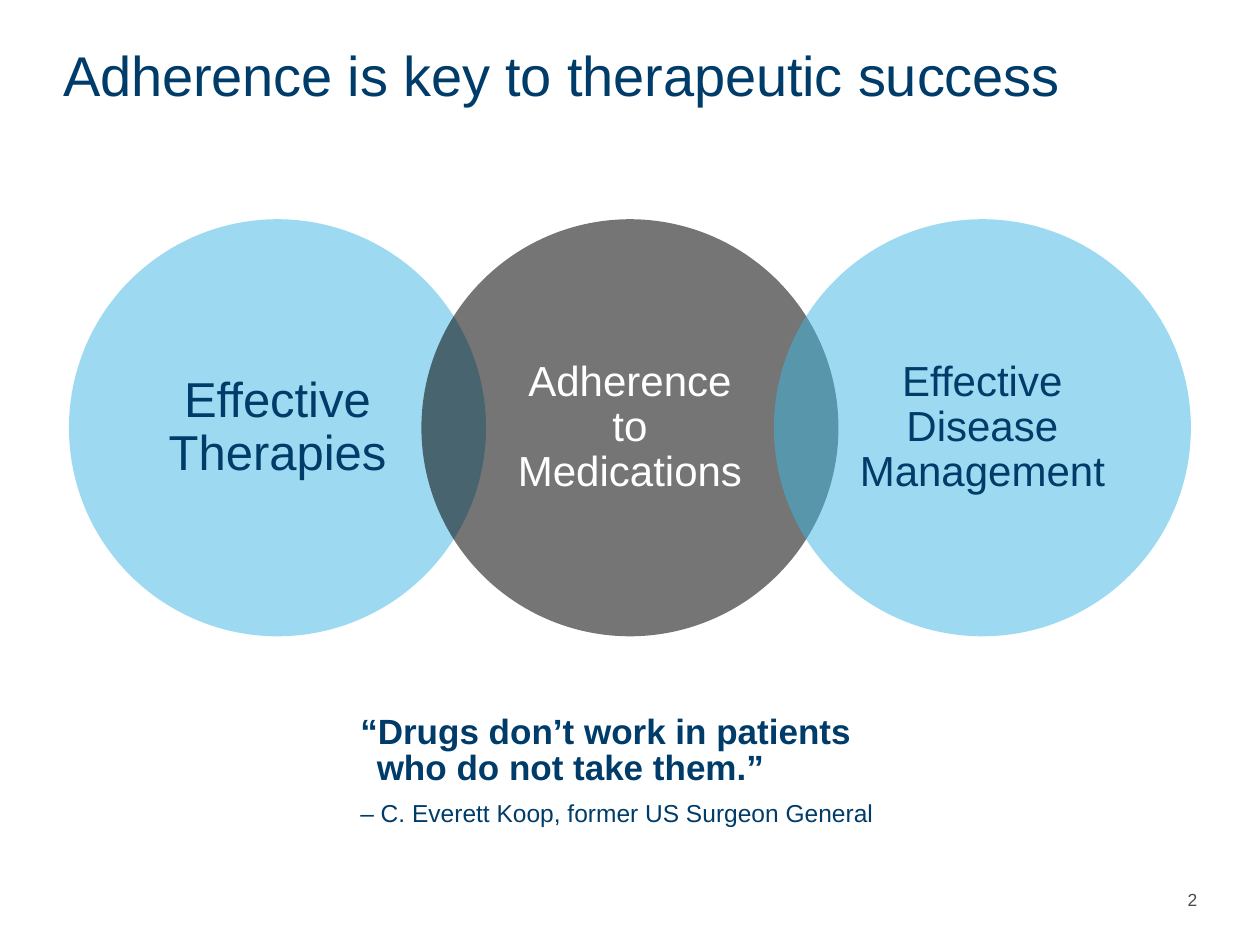
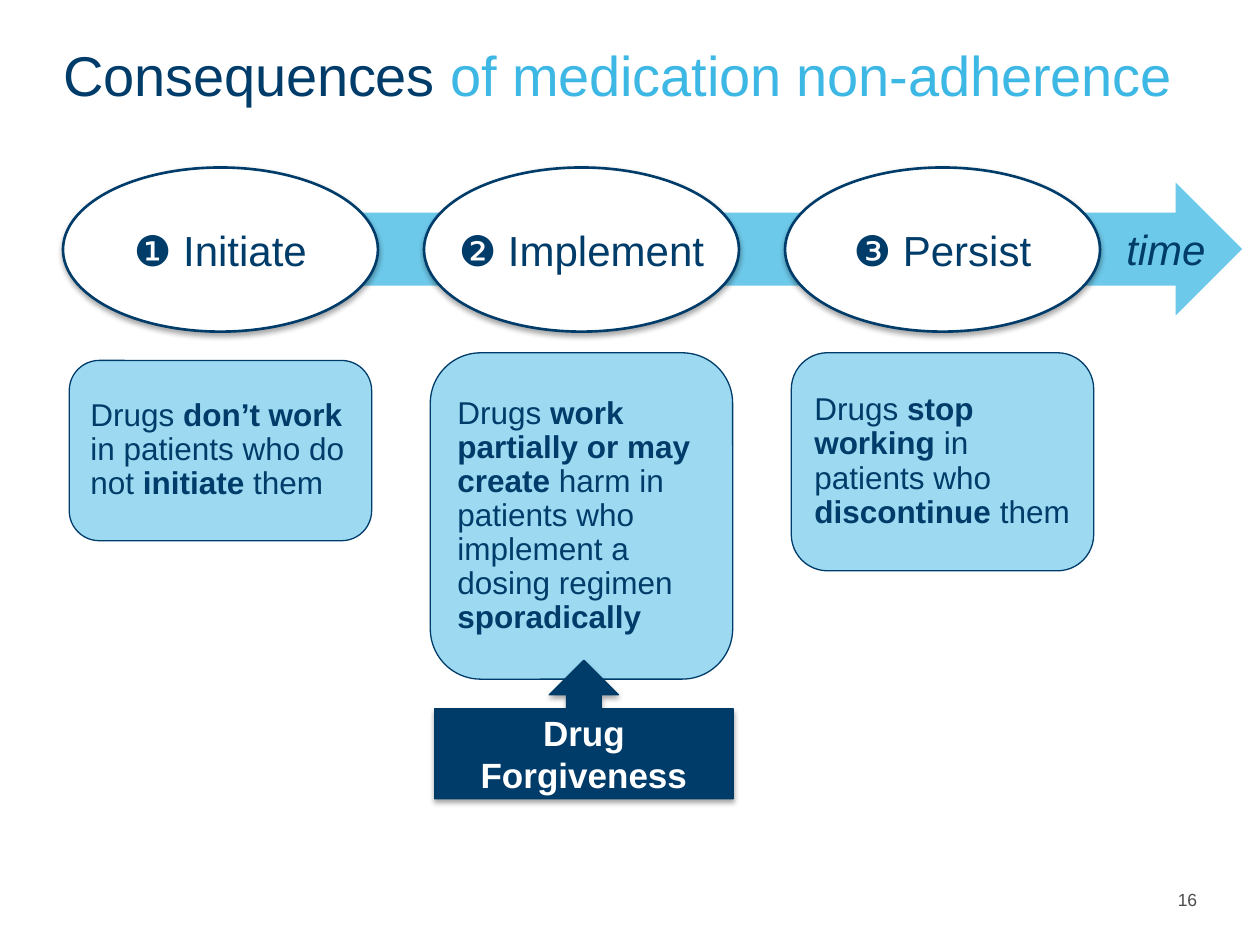
"""Builds two slides on medication adherence: a circle diagram and a timeline."""
from lxml.etree import SubElement
from pptx import Presentation
from pptx.dml.color import RGBColor
from pptx.enum.shapes import MSO_SHAPE as SHAPE
from pptx.enum.text import MSO_ANCHOR as ANCHOR, PP_ALIGN as ALIGN
from pptx.oxml.ns import qn
from pptx.util import Pt

COLORS = {"navy": "003C69", "sky": "3DB7E4", "black": "000000",
          "white": "FFFFFF", "grey": "4B4B4B", "edge": "003B67"}
FONT = "Arial"

TITLES = [
    [("Adherence is key to therapeutic success", {})],
    [("Consequences ", {}), ("of medication non-adherence", {"color": "sky"})],
]
NUMBERS = ["2", "16"]

CIRCLES = [("sky", 50), ("black", 54), ("sky", 50)]
CIRCLE_LABELS = [
    (["Effective", "Therapies"], 28, "navy", 126, 61),
    (["Adherence to Medications"], 24, "white", 132, 86),
    (["Effective", "Disease", "Management"], 24, "navy", 142, 86),
]
QUOTE = [
    [("“Drugs don’t work in patients\nwho do not take them.”", {"size": 20, "bold": True})],
    [("– C. Everett Koop, former US Surgeon General", {"size": 14})],
]

BOLD = {"bold": True}
STAGES = [
    ("❶ Initiate", 206, 103,
     [("Drugs ", {}), ("don’t work ", BOLD), ("in patients who do not ", {}),
      ("initiate", BOLD), (" them", {})]),
    ("❷ Implement", 201.6, 186.5,
     [("Drugs ", {}), ("work partially or may create", BOLD),
      (" harm in patients who implement a dosing regimen ", {}), ("sporadically", BOLD)]),
    ("❸ Persist", 201.6, 124.6,
     [("Drugs ", {}), ("stop working ", BOLD), ("in patients who ", {}),
      ("discontinue ", BOLD), ("them", {})]),
]

CIRCLE_LEFT, CIRCLE_TOP, CIRCLE_SIZE, CIRCLE_STEP = 39.4, 125.3, 238.3, 201.4
STAGE_LEFT, STAGE_TOP, STAGE_W, STAGE_H, STAGE_STEP = 36, 95.7, 180, 93.8, 206.3
CARD_W = 172.8


def rgb(name):
    return RGBColor.from_string(COLORS[name])


def write(sp, paragraphs, size=18, color="navy", align=ALIGN.LEFT, anchor=ANCHOR.TOP,
          insets=(0, 0), wrap=True, spacing=None, before=0, hanging=0, kern=None, **style):
    tf = sp.text_frame
    dx, dy = (Pt(v) for v in insets)
    frame = {"word_wrap": wrap, "vertical_anchor": anchor, "margin_left": dx,
             "margin_right": dx, "margin_top": dy, "margin_bottom": dy}
    for name, value in frame.items():
        setattr(tf, name, value)
    for i, runs in enumerate(paragraphs):
        p = tf.add_paragraph() if i else tf.paragraphs[0]
        p.alignment = align
        if spacing:
            p.line_spacing = spacing
        if i and before:
            p.space_before = Pt(before)
        if hanging:
            pPr = p._p.get_or_add_pPr()
            pPr.set("marL", str(Pt(hanging)))
            pPr.set("indent", str(-Pt(hanging)))
        for text, own in runs:
            look = {"name": FONT, "size": size, "color": color, **style, **own}
            tint = rgb(look.pop("color"))
            look["size"] = Pt(look["size"])
            for j, line in enumerate(text.split("\n")):
                if j:
                    p.add_line_break()
                r = p.add_run()
                r.text = line
                for name, value in look.items():
                    setattr(r.font, name, value)
                r.font.color.rgb = tint
                if kern:
                    r._r.get_or_add_rPr().set("spc", str(kern))


def add_text(s, box, paragraphs, **style):
    write(s.shapes.add_textbox(*map(Pt, box)), paragraphs, **style)


def add_shape(s, kind, box, fill, opacity=100, line=None, width=0.75, shadow=False):
    sp = s.shapes.add_shape(kind, *map(Pt, box))
    sp.shadow.inherit = False
    sp.fill.solid()
    sp.fill.fore_color.rgb = rgb(fill)
    if opacity < 100:
        clr = sp._element.spPr.find(qn("a:solidFill")).find(qn("a:srgbClr"))
        SubElement(clr, qn("a:alpha"), val=str(opacity * 1000))
    if line:
        sp.line.color.rgb = rgb(line)
        sp.line.width = Pt(width)
    else:
        sp.line.fill.background()
    if shadow:
        effects = sp._element.spPr.find(qn("a:effectLst"))
        outer = SubElement(effects, qn("a:outerShdw"), blurRad=str(Pt(3.1)),
                           dist=str(Pt(1.8)), dir="5400000", rotWithShape="0")
        clr = SubElement(outer, qn("a:srgbClr"), val=COLORS["black"])
        SubElement(clr, qn("a:alpha"), val="35000")
    return sp


def add_slide(prs, title, number):
    s = prs.slides.add_slide(prs.slide_layouts[6])
    add_text(s, (36, 28.8, 648.7, 57.6), [title], size=32, spacing=0.86, kern=-10)
    add_text(s, (660.2, 504.7, 31, 18), [[(number, {})]], size=10, color="grey",
             align=ALIGN.RIGHT, insets=(7.2, 3.6))
    return s


def draw_circles(s):
    for i, (fill, opacity) in enumerate(CIRCLES):
        add_shape(s, SHAPE.OVAL, (CIRCLE_LEFT + i * CIRCLE_STEP, CIRCLE_TOP,
                                  CIRCLE_SIZE, CIRCLE_SIZE), fill, opacity)
    mid_y = CIRCLE_TOP + CIRCLE_SIZE / 2
    for i, (lines, size, color, w, h) in enumerate(CIRCLE_LABELS):
        mid_x = CIRCLE_LEFT + i * CIRCLE_STEP + CIRCLE_SIZE / 2
        add_text(s, (mid_x - w / 2, mid_y - h / 2, w, h), [[(t, {})] for t in lines],
                 size=size, color=color, align=ALIGN.CENTER, anchor=ANCHOR.MIDDLE,
                 wrap=len(lines) == 1, spacing=0.9)
    add_text(s, (205.9, 405.4, 307.4, 72), QUOTE, insets=(0, 3.6), spacing=0.86,
             before=8, hanging=9.4)


def draw_timeline(s):
    arrow = add_shape(s, SHAPE.RIGHT_ARROW, (46.8, 104.4, 663, 75.9), "sky", 75)
    arrow.adjustments[0] = 0.55
    write(arrow, [[("time", {})]], size=24, italic=True, align=ALIGN.RIGHT,
          anchor=ANCHOR.MIDDLE, insets=(0, 3.6))
    for i, (name, top, height, effect) in enumerate(STAGES):
        left = STAGE_LEFT + i * STAGE_STEP
        stage = add_shape(s, SHAPE.OVAL, (left, STAGE_TOP, STAGE_W, STAGE_H), "white",
                          line="navy", width=1.5, shadow=True)
        write(stage, [[(name, {})]], size=24, align=ALIGN.CENTER,
              anchor=ANCHOR.MIDDLE, insets=(0, 3.6), wrap=False)
        card = add_shape(s, SHAPE.ROUNDED_RECTANGLE,
                         (left + (STAGE_W - CARD_W) / 2, top, CARD_W, height),
                         "sky", 50, line="navy")
        write(card, [effect], anchor=ANCHOR.MIDDLE, insets=(7.2, 7.2), spacing=0.9)
    callout = add_shape(s, SHAPE.UP_ARROW_CALLOUT, (248.4, 377.3, 170.6, 79.2), "navy",
                        line="edge", shadow=True)
    write(callout, [[("Drug Forgiveness", {})]], size=20, color="white", bold=True,
          align=ALIGN.CENTER, anchor=ANCHOR.MIDDLE, insets=(7.2, 3.6))


def main():
    prs = Presentation()
    prs.slide_width, prs.slide_height = Pt(720), Pt(540)
    for title, number, draw in zip(TITLES, NUMBERS, (draw_circles, draw_timeline)):
        draw(add_slide(prs, title, number))
    prs.save("out.pptx")


if __name__ == "__main__":
    main()
